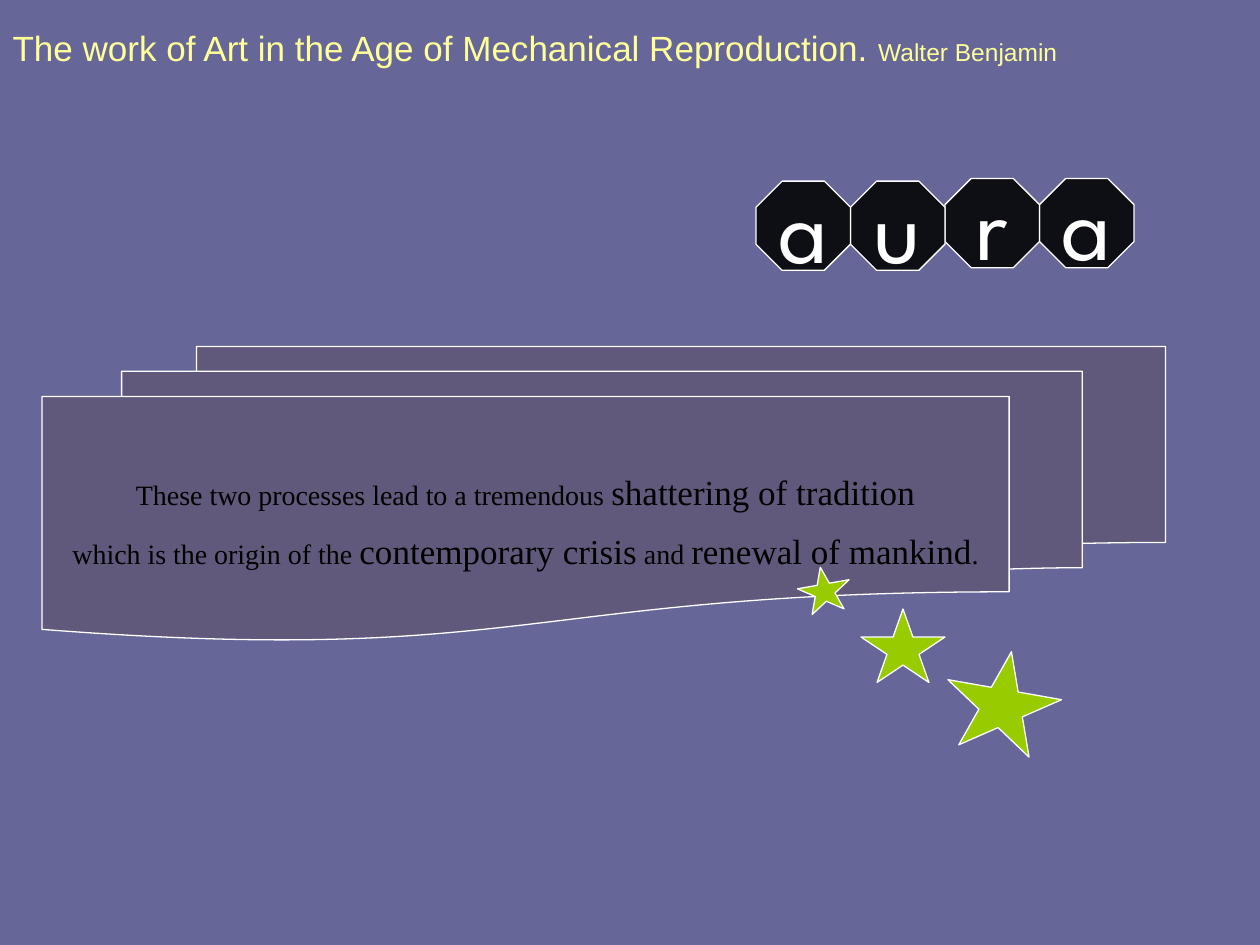
import pptx
import pptx.dml.color
import pptx.enum.shapes
import pptx.enum.text
import pptx.oxml.ns
import pptx.util
import lxml.etree

RGBColor = pptx.dml.color.RGBColor
Preset = pptx.enum.shapes.MSO_SHAPE
Align = pptx.enum.text.PP_ALIGN
Anchor = pptx.enum.text.MSO_ANCHOR

BACKGROUND = RGBColor(0x66, 0x66, 0x99)
TITLE_YELLOW = RGBColor(0xFF, 0xFF, 0x99)
PAPER = RGBColor(0x60, 0x59, 0x7B)
STAR_GREEN = RGBColor(0x99, 0xCC, 0x00)
WHITE = RGBColor(0xFF, 0xFF, 0xFF)
BLACK = RGBColor(0x00, 0x00, 0x00)

COLUMNS = 120
ROWS = 90


class SlideBuilder:
    def __init__(self, presentation):
        self.column = presentation.slide_width / COLUMNS
        self.row = presentation.slide_height / ROWS
        self.slide = presentation.slides.add_slide(presentation.slide_layouts[5])
        self.slide.background.fill.solid()
        self.slide.background.fill.fore_color.rgb = BACKGROUND

    def box(self, left, top, width, height):
        return (round(left * self.column), round(top * self.row),
                round(width * self.column), round(height * self.row))

    def add_runs(self, paragraph, runs, font, color):
        for text, size in runs:
            run = paragraph.add_run()
            run.text = text
            run.font.size = pptx.util.Pt(size)
            run.font.name = font
            run.font.color.rgb = color

    def title(self, area, runs):
        shape = self.slide.shapes.title
        shape.left, shape.top, shape.width, shape.height = self.box(*area)
        shape.text_frame.vertical_anchor = Anchor.MIDDLE
        paragraph = shape.text_frame.paragraphs[0]
        paragraph.alignment = Align.LEFT
        self.add_runs(paragraph, runs, "Arial", TITLE_YELLOW)

    def shape(self, preset, area, color):
        shape = self.slide.shapes.add_shape(preset, *self.box(*area))
        shape.shadow.inherit = False
        shape.fill.solid()
        shape.fill.fore_color.rgb = color
        shape.line.color.rgb = WHITE
        shape.line.width = pptx.util.Pt(0.75)
        return shape

    def centered_paragraph(self, shape):
        shape.text_frame.word_wrap = False
        shape.text_frame.vertical_anchor = Anchor.MIDDLE
        paragraph = shape.text_frame.paragraphs[0]
        paragraph.alignment = Align.CENTER
        return paragraph

    def letter_tile(self, letter, area):
        tile = self.shape(Preset.OCTAGON, area, BLACK)
        tile.adjustments[0] = 0.293
        properties = tile.element.spPr
        color = properties.find(pptx.oxml.ns.qn("a:solidFill"))[0]
        lxml.etree.SubElement(color, pptx.oxml.ns.qn("a:alpha"), val="86000")
        self.add_runs(self.centered_paragraph(tile), [(letter, 54)], "League Spartan", WHITE)

    def document_stack(self, area, lines):
        stack = self.shape(Preset.FLOWCHART_MULTIDOCUMENT, area, PAPER)
        paragraph = self.centered_paragraph(stack)
        paragraph.line_spacing = 1.4
        for index, runs in enumerate(lines):
            if index:
                paragraph.add_line_break()
            self.add_runs(paragraph, runs, "Times New Roman", BLACK)

    def star(self, area, rotation):
        self.shape(Preset.STAR_5_POINT, area, STAR_GREEN).rotation = rotation


def main():
    presentation = pptx.Presentation()
    presentation.slide_width = pptx.util.Inches(10)
    presentation.slide_height = pptx.util.Inches(7.5)
    builder = SlideBuilder(presentation)

    builder.title((0, 0, COLUMNS, 9), [
        ("The work of Art in the Age of Mechanical Reproduction. ", 20),
        ("Walter Benjamin", 14),
    ])

    tile_tops = (17.25, 17.25, 17, 17)
    for index, (letter, top) in reversed(list(enumerate(zip("aura", tile_tops)))):
        builder.letter_tile(letter, (72 + 9 * index, top, 9, 8.5))

    builder.document_stack((4, 33, 107, 28), [
        [("These two processes lead to a tremendous ", 16),
         ("shattering of tradition", 20)],
        [("which is the origin of the ", 16),
         ("contemporary crisis", 20),
         (" and ", 16),
         ("renewal of mankind", 20),
         (".", 16)],
    ])

    for area, rotation in (
        ((82, 58, 8, 7), 0),
        ((90, 62, 11, 9.6), 10),
        ((76, 54, 5, 4.3), 350),
    ):
        builder.star(area, rotation)

    presentation.save("out.pptx")


if __name__ == "__main__":
    main()
